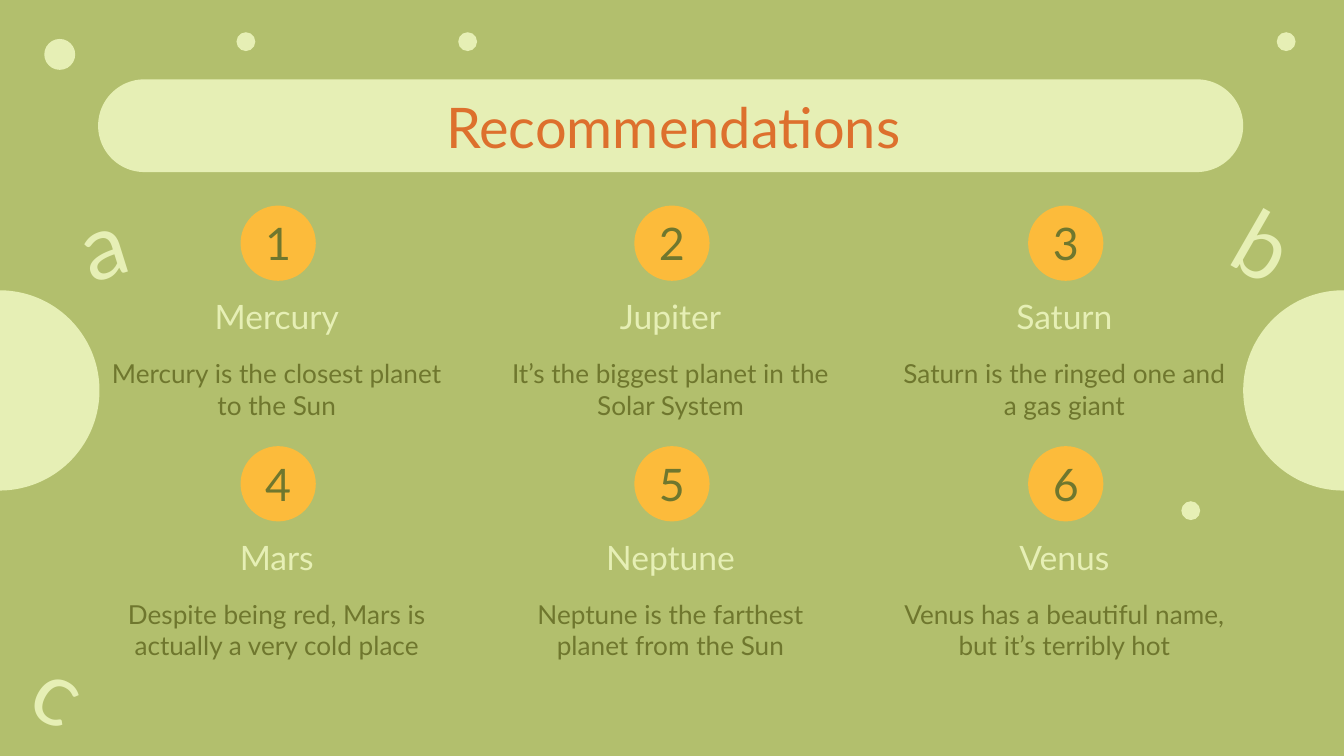
from typing import NamedTuple

from pptx import Presentation
from pptx.dml.color import RGBColor
from pptx.enum.shapes import MSO_SHAPE
from pptx.enum.text import MSO_ANCHOR, PP_ALIGN
from pptx.util import Inches, Pt

SLIDE_WIDTH = Inches(10)
SLIDE_HEIGHT = SLIDE_WIDTH * 9 // 16
COLUMNS = 1000
ROWS = COLUMNS * 9 / 16
FONT = "Lato"
OLIVE, CREAM, MOSS, AMBER, RUST = "B2BF6D", "E6EFB5", "6F772E", "FCBB3B", "DD702D"

PLANETS = [
    ("Mercury", ["Mercury is the closest planet to the Sun"]),
    ("Jupiter", ["It’s the biggest planet in the Solar System"]),
    ("Saturn", ["Saturn is the ringed one and a gas giant"]),
    ("Mars", ["Despite being red, Mars is actually a very cold place"]),
    ("Neptune", ["Neptune is the farthest", "planet from the Sun"]),
    ("Venus", ["Venus has a beautiful name, but it’s terribly hot"]),
]


class Box(NamedTuple):
    column: float
    row: float
    columns: float
    rows: float

    def inside(self, column, row, columns, rows):
        return Box(self.column + column, self.row + row, columns, rows)

    def frame(self):
        across, down = SLIDE_WIDTH / COLUMNS, SLIDE_HEIGHT / ROWS
        return (round(self.column * across), round(self.row * down),
                round(self.columns * across), round(self.rows * down))


def colour(hex_value):
    return RGBColor.from_string(hex_value)


def add_label(slide, box, lines, size, ink, align=PP_ALIGN.CENTER):
    label = slide.shapes.add_textbox(*box.frame())
    frame = label.text_frame
    frame.word_wrap = True
    frame.vertical_anchor = MSO_ANCHOR.MIDDLE
    frame.margin_left = frame.margin_right = Inches(0.1)
    frame.margin_top = frame.margin_bottom = Inches(0.1)
    frame.text = "\n".join(lines)
    for paragraph in frame.paragraphs:
        paragraph.alignment = align
        paragraph.font.name = FONT
        paragraph.font.size = Pt(size)
        paragraph.font.color.rgb = colour(ink)
    return label


def add_filled(slide, box, fill, preset=MSO_SHAPE.OVAL):
    filled = slide.shapes.add_shape(preset, *box.frame())
    filled.shadow.inherit = False
    filled.fill.solid()
    filled.fill.fore_color.rgb = colour(fill)
    filled.line.fill.background()
    return filled


def add_heading(slide, box, heading):
    banner = add_filled(slide, box, CREAM, MSO_SHAPE.ROUNDED_RECTANGLE)
    banner.adjustments[0] = 0.5
    add_label(slide, box.inside(2, -1, box.columns, 71), [heading], 30, RUST)


def add_decoration(slide, box):
    side_disc = 149
    for column in (-75, 925):
        add_filled(slide, box.inside(column, 216, side_disc, side_disc), CREAM)
    for column, row, diameter in [(176, 24, 14), (341, 24, 14), (33, 29, 23),
                                  (950, 24, 14), (879, 373, 14)]:
        add_filled(slide, box.inside(column, row, diameter, diameter), CREAM)
    for letter, column, row, angle in [("a", 50, 152, -17.4), ("b", 913, 150, 29.9),
                                       ("c", 20, 483, 29.9)]:
        glyph = add_label(slide, box.inside(column, row, 49, 59), [letter], 48, CREAM,
                          PP_ALIGN.LEFT)
        glyph.rotation = angle


def add_card(slide, box, number, planet, description):
    diameter = 56
    badge = box.inside((box.columns - diameter) / 2 + 1, 0, diameter, diameter)
    add_filled(slide, badge, AMBER)
    add_label(slide, badge.inside(0, 5, diameter, 45), [str(number)], 24, MOSS)
    add_label(slide, box.inside(0, 62, box.columns, 41), [planet], 18, CREAM)
    add_label(slide, box.inside(0, 102, box.columns, 69), description, 14, MOSS)


def add_cards(slide, box, planets, across=3, gap_columns=27, gap_rows=8):
    down = len(planets) // across
    columns = (box.columns - gap_columns * (across - 1)) / across
    rows = (box.rows - gap_rows * (down - 1)) / down
    for index, (planet, description) in enumerate(planets):
        line, place = divmod(index, across)
        card = box.inside(place * (columns + gap_columns), line * (rows + gap_rows),
                          columns, rows)
        add_card(slide, card, index + 1, planet, description)


def main():
    presentation = Presentation()
    presentation.slide_width, presentation.slide_height = SLIDE_WIDTH, SLIDE_HEIGHT
    slide = presentation.slides.add_slide(presentation.slide_layouts[6])
    slide.background.fill.solid()
    slide.background.fill.fore_color.rgb = colour(OLIVE)
    page = Box(0, 0, COLUMNS, ROWS)
    add_decoration(slide, page)
    add_heading(slide, page.inside(73, 59, 852, 69), "Recommendations")
    add_cards(slide, page.inside(73, 153, 852, 350), PLANETS)
    presentation.save("out.pptx")


if __name__ == "__main__":
    main()
